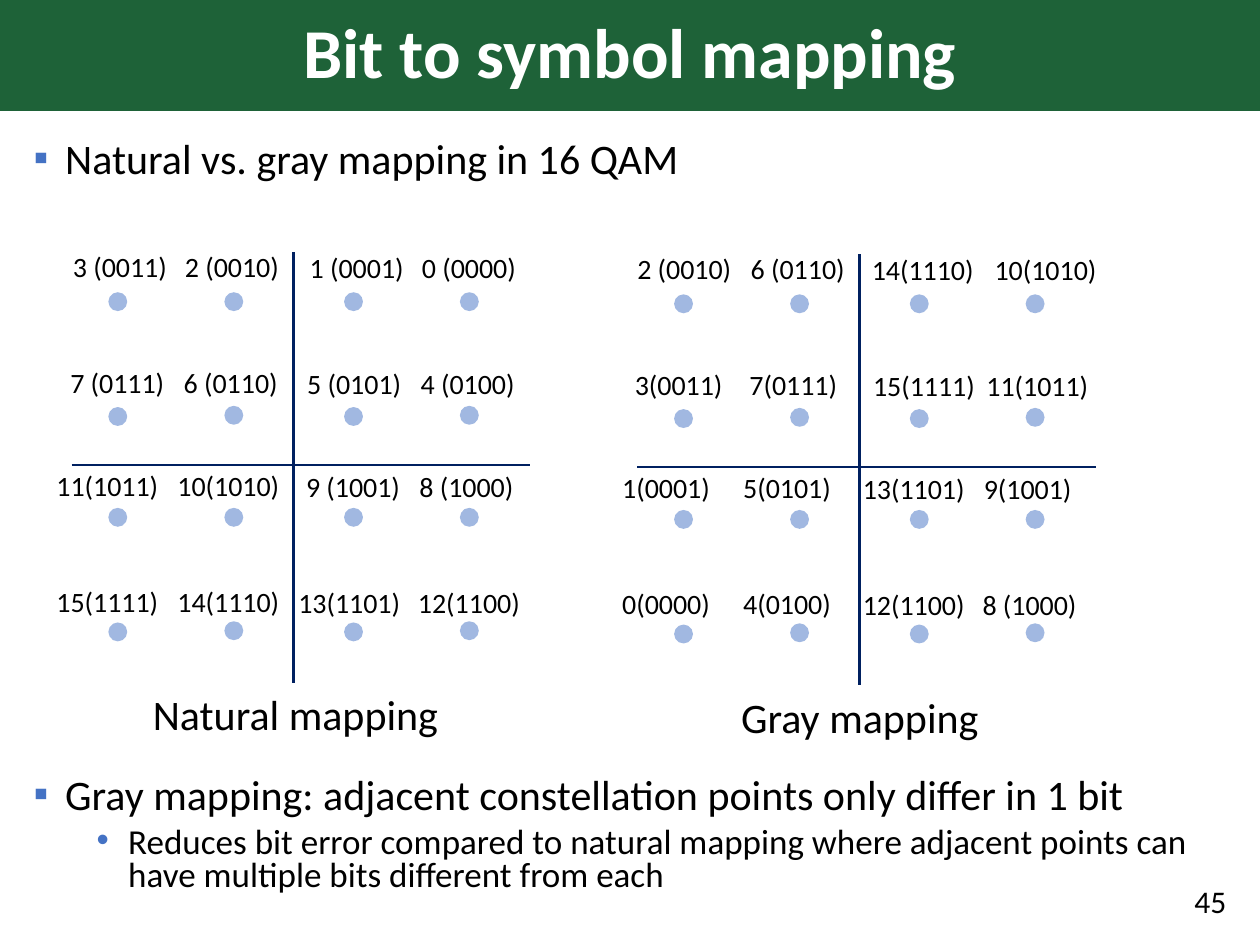
import pptx
import pptx.util
import pptx.dml.color
import pptx.enum.shapes
import pptx.enum.text
import pptx.oxml.ns
import lxml.etree

Pt = pptx.util.Pt
qn = pptx.oxml.ns.qn
ALIGN = pptx.enum.text.PP_ALIGN
ANCHOR = pptx.enum.text.MSO_ANCHOR
COLORS = {"banner": "1E6238", "title": "FFFFFF", "text": "000000", "accent": "4472C4", "axis": "002060"}

presentation = pptx.Presentation()
presentation.slide_width = Pt(720)
presentation.slide_height = Pt(540)
slide = presentation.slides.add_slide(presentation.slide_layouts[6])


def rgb(name):
    return pptx.dml.color.RGBColor.from_string(COLORS[name])


def add_text(text, left, top, width, height, size, align=ALIGN.LEFT, anchor=ANCHOR.TOP):
    shape = slide.shapes.add_textbox(Pt(left), Pt(top), Pt(width), Pt(height))
    text_frame = shape.text_frame
    text_frame.word_wrap = True
    text_frame.vertical_anchor = anchor
    text_frame.text = text
    for paragraph in text_frame.paragraphs:
        paragraph.alignment = align
        for run in paragraph.runs:
            run.font.name = "Calibri"
            run.font.size = Pt(size)
            run.font.color.rgb = rgb("text")
    return shape


title = add_text("Bit to symbol mapping", 0, 0, 720, 63.4, 40, ALIGN.CENTER, ANCHOR.MIDDLE)
title.fill.solid()
title.fill.fore_color.rgb = rgb("banner")
title_paragraph = title.text_frame.paragraphs[0]
title_paragraph.line_spacing = 0.9
title_paragraph.runs[0].font.bold = True
title_paragraph.runs[0].font.color.rgb = rgb("title")

bullet_boxes = [
    (77.8, 36, "Natural vs. gray mapping in 16 QAM"),
    (441.2, 88, "Gray mapping: adjacent constellation points only differ in 1 bit\n"
     "Reduces bit error compared to natural mapping where adjacent points can "
     "have multiple bits different from each"),
]
bullet_levels = [(24, 18, 10, "▪"), (20, 54, 5, "•")]
for top, height, text in bullet_boxes:
    shape = add_text(text, 12.2, top, 694.8, height, 24)
    for level, paragraph in enumerate(shape.text_frame.paragraphs):
        size, margin, space_before, symbol = bullet_levels[level]
        paragraph.level = level
        paragraph.line_spacing = 0.8
        paragraph.space_before = Pt(space_before if level else 0)
        paragraph.runs[0].font.size = Pt(size)
        properties = paragraph._p.get_or_add_pPr()
        properties.set("marL", str(Pt(margin)))
        properties.set("indent", str(-Pt(18)))
        bullet_color = lxml.etree.SubElement(properties, qn("a:buClr"))
        lxml.etree.SubElement(bullet_color, qn("a:srgbClr"), val=COLORS["accent"])
        lxml.etree.SubElement(properties, qn("a:buFont"), typeface="Arial")
        lxml.etree.SubElement(properties, qn("a:buChar"), char=symbol)

add_text("45", 545.8, 500.4, 162, 28.8, 18, ALIGN.RIGHT, ANCHOR.MIDDLE)

dot_lefts = [61.9, 128.2, 196.6, 262.8]
dot_tops = [167, 232.6, 290.2, 355.7]
label_tops = [139, 205.2, 264.2, 330.5]
constellations = [
    ("Natural mapping", 0, 0, 71.3, [
        [(34.6, "3 (0011)"), (98.6, "2 (0010)"), (169.9, "1 (0001)"), (234, "0 (0000)")],
        [(33.1, "7 (0111)"), (97.9, "6 (0110)"), (168.5, "5 (0101)"), (233.3, "4 (0100)")],
        [(25.2, "11(1011)"), (94.3, "10(1010)"), (167.8, "9 (1001)"), (232.6, "8 (1000)")],
        [(25.2, "15(1111)"), (94.3, "14(1110)"), (163.4, "13(1101)"), (231.8, "12(1100)")],
    ]),
    ("Gray mapping", 323.3, 1.2, 393.8, [
        [(33.8, "2 (0010)"), (98.6, "6 (0110)"), (167.8, "14(1110)"), (238, "10(1010)")],
        [(32.4, "3(0011)"), (97.9, "7(0111)"), (168.5, "15(1111)"), (233.3, "11(1011)")],
        [(25.2, "1(0001)"), (94.3, "5(0101)"), (162.7, "13(1101)"), (231.8, "9(1001)")],
        [(25.2, "0(0000)"), (94.3, "4(0100)"), (162.7, "12(1100)"), (231.1, "8 (1000)")],
    ]),
]
axes = [(167.8, 390.2, 167.8, 144), (41, 265.7, 303.1, 265.7)]

for caption, shift_x, shift_y, caption_left, label_rows in constellations:
    for start_x, start_y, end_x, end_y in axes:
        axis = slide.shapes.add_connector(
            pptx.enum.shapes.MSO_CONNECTOR.STRAIGHT,
            Pt(start_x + shift_x), Pt(start_y + shift_y), Pt(end_x + shift_x), Pt(end_y + shift_y))
        axis.line.color.rgb = rgb("axis")
        axis.line.width = Pt(1.5)
        lxml.etree.SubElement(axis._element.spPr, qn("a:effectLst"))
    for row, labels in enumerate(label_rows):
        for column, (label_left, label) in enumerate(labels):
            raised = 0.7 if row % 2 and column % 2 else 0
            dot = slide.shapes.add_shape(
                pptx.enum.shapes.MSO_SHAPE.OVAL, Pt(dot_lefts[column] + shift_x),
                Pt(dot_tops[row] + shift_y - raised), Pt(10.8), Pt(10.8))
            dot.shadow.inherit = False
            dot.line.fill.background()
            dot.fill.solid()
            dot.fill.fore_color.rgb = rgb("accent")
            fill_color = dot._element.spPr.find(qn("a:solidFill")).find(qn("a:srgbClr"))
            lxml.etree.SubElement(fill_color, qn("a:alpha"), val="50000")
            lowered = 0.7 if column > 1 else 0
            add_text(label, label_left + shift_x, label_tops[row] + shift_y + lowered, 78, 26.6, 16)
    add_text(caption, caption_left, 390.2 + shift_y, 195.1, 36, 24, ALIGN.CENTER)

presentation.save("out.pptx")
